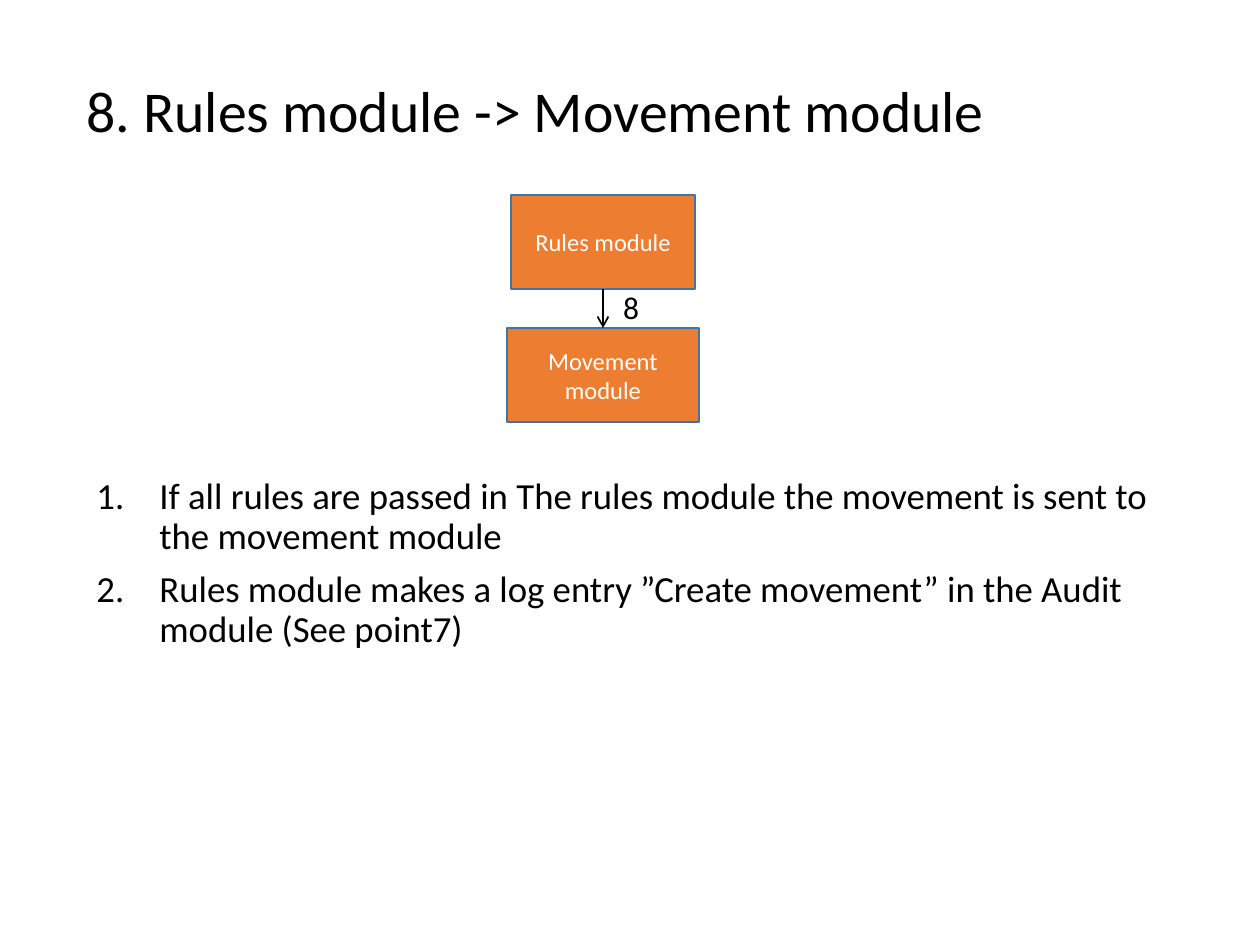
from dataclasses import dataclass

import lxml.etree
import pptx
import pptx.dml.color
import pptx.enum.shapes
import pptx.enum.text
import pptx.oxml.ns
import pptx.shapes.autoshape
import pptx.shapes.connector
import pptx.slide
import pptx.util

PX_PER_INCH = 126
ANCHOR = pptx.enum.text.MSO_ANCHOR
ALIGN = pptx.enum.text.PP_ALIGN
RGB = pptx.dml.color.RGBColor


@dataclass(frozen=True)
class Theme:
    font: str = "Calibri"
    text: RGB = RGB(0x00, 0x00, 0x00)
    module_text: RGB = RGB(0xFF, 0xFF, 0xFF)
    module_fill: RGB = RGB(0xED, 0x7D, 0x31)
    module_line: RGB = RGB(0x43, 0x73, 0x9E)
    title_size: float = 33
    step_size: float = 21
    label_size: float = 18
    module_size: float = 14
    line_width: float = 1
    line_spacing: float = 0.9
    step_gap: float = 7.5


@dataclass(frozen=True)
class Box:
    left: int
    top: int
    width: int
    height: int


@dataclass(frozen=True)
class Module:
    name: str
    box: Box


THEME = Theme()
TITLE_BOX = Box(74, 40, 1086, 147)
STEPS_BOX = Box(84, 472, 1101, 456)
LABEL_BOX = Box(610, 282, 42, 50)
MODULES = (
    Module("Rules module", Box(511, 195, 184, 94)),
    Module("Movement module", Box(507, 328, 192, 94)),
)
STEPS = (
    "If all rules are passed in The rules module the movement is sent to the movement module",
    "Rules module makes a log entry ”Create movement” in the Audit module (See point7)",
)


def px(length: int) -> pptx.util.Emu:
    return pptx.util.Emu(round(length * 914400 / PX_PER_INCH))


def place(box: Box) -> tuple:
    return px(box.left), px(box.top), px(box.width), px(box.height)


def add_xml(parent, tag: str, **attributes: str) -> None:
    lxml.etree.SubElement(parent, pptx.oxml.ns.qn(tag), **attributes)


def style(paragraph, size: float, color: RGB) -> None:
    paragraph.font.name = THEME.font
    paragraph.font.size = pptx.util.Pt(size)
    paragraph.font.color.rgb = color


def add_text(slide: pptx.slide.Slide, box: Box, lines: tuple, size: float,
             anchor: ANCHOR = ANCHOR.TOP, wrap: bool = True):
    frame = slide.shapes.add_textbox(*place(box)).text_frame
    frame.word_wrap = wrap
    frame.vertical_anchor = anchor
    frame.text = "\n".join(lines)
    for paragraph in frame.paragraphs:
        style(paragraph, size, THEME.text)
    return frame


def add_steps(slide: pptx.slide.Slide) -> None:
    frame = add_text(slide, STEPS_BOX, STEPS, THEME.step_size)
    for paragraph in frame.paragraphs:
        paragraph.line_spacing = THEME.line_spacing
        paragraph.space_before = pptx.util.Pt(THEME.step_gap)
        properties = paragraph._p.get_or_add_pPr()
        indent = px(PX_PER_INCH // 2)
        properties.set("marL", str(indent))
        properties.set("indent", str(-indent))
        # Numbering has to precede the default run properties
        add_xml(properties, "a:buAutoNum", type="arabicPeriod")
        properties.append(properties.find(pptx.oxml.ns.qn("a:defRPr")))


def add_module(slide: pptx.slide.Slide, module: Module) -> pptx.shapes.autoshape.Shape:
    rectangle = slide.shapes.add_shape(
        pptx.enum.shapes.MSO_SHAPE.RECTANGLE, *place(module.box))
    rectangle.shadow.inherit = False
    rectangle.fill.solid()
    rectangle.fill.fore_color.rgb = THEME.module_fill
    rectangle.line.color.rgb = THEME.module_line
    rectangle.line.width = pptx.util.Pt(THEME.line_width)
    frame = rectangle.text_frame
    frame.word_wrap = True
    frame.vertical_anchor = ANCHOR.MIDDLE
    frame.text = module.name
    frame.paragraphs[0].alignment = ALIGN.CENTER
    style(frame.paragraphs[0], THEME.module_size, THEME.module_text)
    return rectangle


def add_arrow(slide: pptx.slide.Slide, source: pptx.shapes.autoshape.Shape,
              target: pptx.shapes.autoshape.Shape) -> None:
    arrow = slide.shapes.add_connector(
        pptx.enum.shapes.MSO_CONNECTOR.STRAIGHT, 0, 0, 0, 0)
    arrow.begin_connect(source, 2)
    arrow.end_connect(target, 0)
    arrow.line.color.rgb = THEME.text
    arrow.line.width = pptx.util.Pt(THEME.line_width)
    properties = arrow._element.spPr
    add_xml(properties.find(pptx.oxml.ns.qn("a:ln")), "a:tailEnd", type="arrow")
    add_xml(properties, "a:effectLst")


def main() -> None:
    deck = pptx.Presentation()
    deck.slide_width = pptx.util.Inches(10)
    deck.slide_height = pptx.util.Inches(7.5)
    slide = deck.slides.add_slide(deck.slide_layouts[6])

    # Title and numbered steps
    title = add_text(slide, TITLE_BOX, ("8. Rules module -> Movement module",),
                     THEME.title_size, ANCHOR.MIDDLE)
    title.paragraphs[0].line_spacing = THEME.line_spacing
    add_steps(slide)

    # Modules and the numbered flow between them
    rules, movement = (add_module(slide, module) for module in MODULES)
    add_arrow(slide, rules, movement)
    label = add_text(slide, LABEL_BOX, ("8",), THEME.label_size, wrap=False)
    label.auto_size = pptx.enum.text.MSO_AUTO_SIZE.SHAPE_TO_FIT_TEXT
    label.paragraphs[0].alignment = ALIGN.CENTER

    deck.save("out.pptx")


if __name__ == "__main__":
    main()
